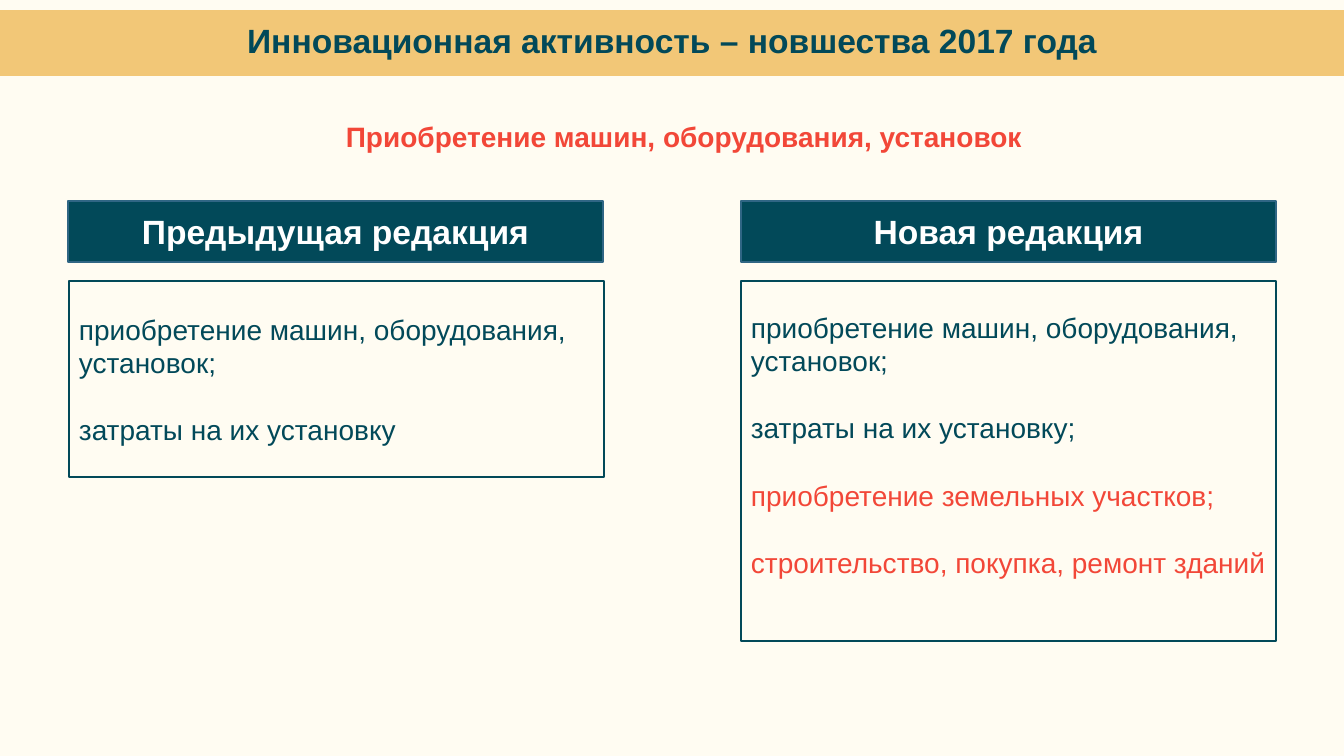
import dataclasses

import pptx
import pptx.dml.color
import pptx.enum.shapes
import pptx.enum.text
import pptx.util

Color = pptx.dml.color.RGBColor.from_string
Pt = pptx.util.Pt
Align = pptx.enum.text.PP_ALIGN
Anchor = pptx.enum.text.MSO_ANCHOR
Fit = pptx.enum.text.MSO_AUTO_SIZE


@dataclasses.dataclass(frozen=True)
class Theme:
    font: str = "Arial"
    paper: str = "FFFCF2"
    sand: str = "F2C777"
    teal: str = "024959"
    edge: str = "306684"
    red: str = "F24738"
    white: str = "FFFFFF"
    head: int = 24
    body: int = 20
    lead: int = 24


class Page:
    def __init__(self, deck, theme):
        self.theme = theme
        self.slide = deck.slides.add_slide(deck.slide_layouts[5])
        fill = self.slide.background.fill
        fill.solid()
        fill.fore_color.rgb = Color(theme.paper)

    @staticmethod
    def px(count):
        return pptx.util.Emu(round(count * 914400 / 100.8))

    def place(self, shape, area):
        shape.left, shape.top, shape.width, shape.height = map(self.px, area)

    def paint(self, shape, fill, line, width):
        if fill:
            shape.fill.solid()
            shape.fill.fore_color.rgb = Color(fill)
        else:
            shape.fill.background()
        shape.line.color.rgb = Color(line)
        shape.line.width = Pt(width)

    def style(self, para, text, size, color, bold=False, align=Align.CENTER):
        para.text = text
        para.alignment = align
        font = para.font
        font.name, font.size, font.bold = self.theme.font, Pt(size), bold
        font.color.rgb = Color(color)

    def rect(self, area, fill, line):
        kind = pptx.enum.shapes.MSO_SHAPE.RECTANGLE
        shape = self.slide.shapes.add_shape(kind, *map(self.px, area))
        shape.shadow.inherit = False
        self.paint(shape, fill, line, 1)
        shape.text_frame.word_wrap = True
        return shape.text_frame

    def title(self, text, area):
        shape = self.slide.shapes.title
        self.place(shape, area)
        self.paint(shape, self.theme.sand, self.theme.sand, 2.25)
        frame = shape.text_frame
        frame.auto_size = Fit.NONE
        frame.vertical_anchor = Anchor.MIDDLE
        para = frame.paragraphs[0]
        self.style(para, text, self.theme.head, self.theme.teal, True)
        para.line_spacing = Pt(self.theme.lead)

    def label(self, text, area):
        frame = self.slide.shapes.add_textbox(*map(self.px, area)).text_frame
        frame.word_wrap = False
        frame.auto_size = Fit.SHAPE_TO_FIT_TEXT
        self.style(frame.paragraphs[0], text, self.theme.body,
                   self.theme.red, True)

    def header(self, text, area):
        frame = self.rect(area, self.theme.teal, self.theme.edge)
        frame.vertical_anchor = Anchor.MIDDLE
        self.style(frame.paragraphs[0], text, self.theme.head,
                   self.theme.white, True)

    def panel(self, items, area, inset):
        frame = self.rect(area, None, self.theme.teal)
        frame.vertical_anchor = Anchor.TOP
        frame.margin_top = self.px(inset)
        for rank, (text, color) in enumerate(items):
            para = frame.add_paragraph() if rank else frame.paragraphs[0]
            self.style(para, text, self.theme.body, color, align=Align.LEFT)
            para.line_spacing = Pt(self.theme.lead)
            para.space_before = Pt(self.theme.lead if rank else 0)


def main():
    deck = pptx.Presentation()
    deck.slide_width, deck.slide_height = Page.px(1344), Page.px(756)
    theme = Theme()
    page = Page(deck, theme)

    # Title band and subject
    page.title("Инновационная активность – новшества 2017 года",
               (0, 12, 1344, 62))
    page.label("Приобретение машин, оборудования, установок",
               (333, 115, 702, 44))

    # Two wordings side by side
    buy = ("приобретение машин, оборудования, установок;", theme.teal)
    old = [buy, ("затраты на их установку", theme.teal)]
    new = [buy,
           ("затраты на их установку;", theme.teal),
           ("приобретение земельных участков;", theme.red),
           ("строительство, покупка, ремонт зданий", theme.red)]
    columns = [("Предыдущая редакция", old, 68, 69, 196, 31),
               ("Новая редакция", new, 741, 741, 360, 29)]
    for name, items, left, edge, height, inset in columns:
        page.header(name, (left, 201, 535, 61))
        page.panel(items, (edge, 281, 535, height), inset)

    deck.save("out.pptx")


if __name__ == "__main__":
    main()
